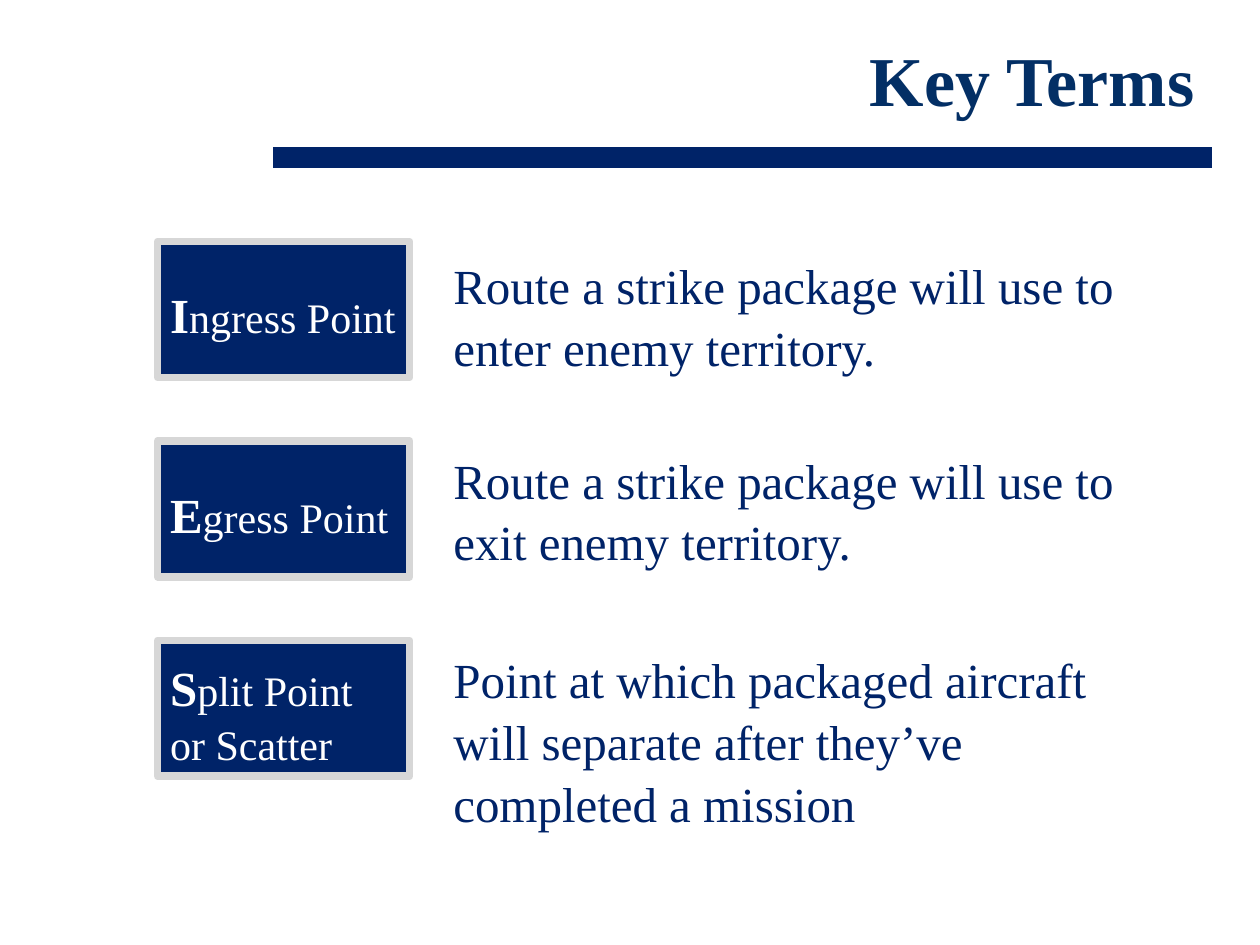
import pptx
import pptx.dml.color
import pptx.enum.shapes
import pptx.enum.text
import pptx.oxml.ns
import pptx.util
from lxml import etree
from pptx.util import Cm, Pt

FONT = "Times New Roman"
COLORS = {"navy": "002368", "title": "032F65", "border": "D7D7D7", "white": "FFFFFF"}

# Initial letter, rest of the term, definition, definition's drop and height in cm
TERMS = [
    ("I", "ngress Point",
     "Route a strike package will use to enter enemy territory.", 0.1, 2.64),
    ("E", "gress Point",
     "Route a strike package will use to exit enemy territory.", 0, 2.64),
    ("S", "plit Point or Scatter",
     "Point at which packaged aircraft will separate after they’ve completed a mission",
     0, 3.84),
]
FIRST_ROW_TOP = 4.87
ROW_PITCH = 4.02


def color(name):
    return pptx.dml.color.RGBColor.from_string(COLORS[name])


def set_font(font, size, color_name, bold=False):
    font.name = FONT
    font.size = Pt(size)
    font.bold = bold
    font.color.rgb = color(color_name)


def add_header(slide, left, top, width, height):
    """Right-aligned title with a thick rule along its lower edge."""
    title = slide.shapes.title
    title.left, title.top = Cm(left), Cm(top)
    title.width, title.height = Cm(width), Cm(height)
    title.text_frame.text = "Key Terms"
    title.text_frame.vertical_anchor = pptx.enum.text.MSO_ANCHOR.MIDDLE
    paragraph = title.text_frame.paragraphs[0]
    paragraph.alignment = pptx.enum.text.PP_ALIGN.RIGHT
    set_font(paragraph.font, 40, "title", bold=True)

    bottom = Cm(top + height)
    rule = slide.shapes.add_connector(
        pptx.enum.shapes.MSO_CONNECTOR.STRAIGHT,
        Cm(left + 4.04), bottom, Cm(left + width + 0.1), bottom)
    rule.line.color.rgb = color("navy")
    rule.line.width = Pt(12.25)
    etree.SubElement(rule._element.spPr, pptx.oxml.ns.qn("a:effectLst"))


def add_term_box(slide, left, top, width, height, initial, rest):
    box = slide.shapes.add_shape(
        pptx.enum.shapes.MSO_SHAPE.RECTANGLE, Cm(left), Cm(top), Cm(width), Cm(height))
    box.shadow.inherit = False
    box.fill.solid()
    box.fill.fore_color.rgb = color("navy")
    box.line.color.rgb = color("border")
    box.line.width = Pt(4.33)

    frame = box.text_frame
    frame.word_wrap = True
    frame.margin_top = Cm(0.25)
    frame.vertical_anchor = pptx.enum.text.MSO_ANCHOR.MIDDLE
    paragraph = frame.paragraphs[0]
    paragraph.alignment = pptx.enum.text.PP_ALIGN.LEFT
    paragraph.line_spacing = 1.05
    for text, size, bold in ((initial, 28, True), (rest, 24, False)):
        run = paragraph.add_run()
        run.text = text
        set_font(run.font, size, "white", bold)


def add_definition(slide, left, top, width, height, text):
    frame = slide.shapes.add_textbox(
        Cm(left), Cm(top), Cm(width), Cm(height)).text_frame
    frame.word_wrap = True
    frame.auto_size = pptx.enum.text.MSO_AUTO_SIZE.SHAPE_TO_FIT_TEXT
    paragraph = frame.paragraphs[0]
    paragraph.text = text
    paragraph.line_spacing = 1.05
    set_font(paragraph.font, 28, "navy")


def main():
    presentation = pptx.Presentation()
    presentation.slide_width, presentation.slide_height = Cm(25.4), Cm(19.05)
    slide = presentation.slides.add_slide(presentation.slide_layouts[5])
    add_header(slide, 1.47, 0, 22.86, 3.18)
    for row, (initial, rest, definition, drop, height) in enumerate(TERMS):
        top = FIRST_ROW_TOP + row * ROW_PITCH
        add_term_box(slide, 3.18, top, 5.08, 2.74, initial, rest)
        add_definition(slide, 8.89, top + drop, 14.17, height, definition)
    presentation.save("out.pptx")


if __name__ == "__main__":
    main()
